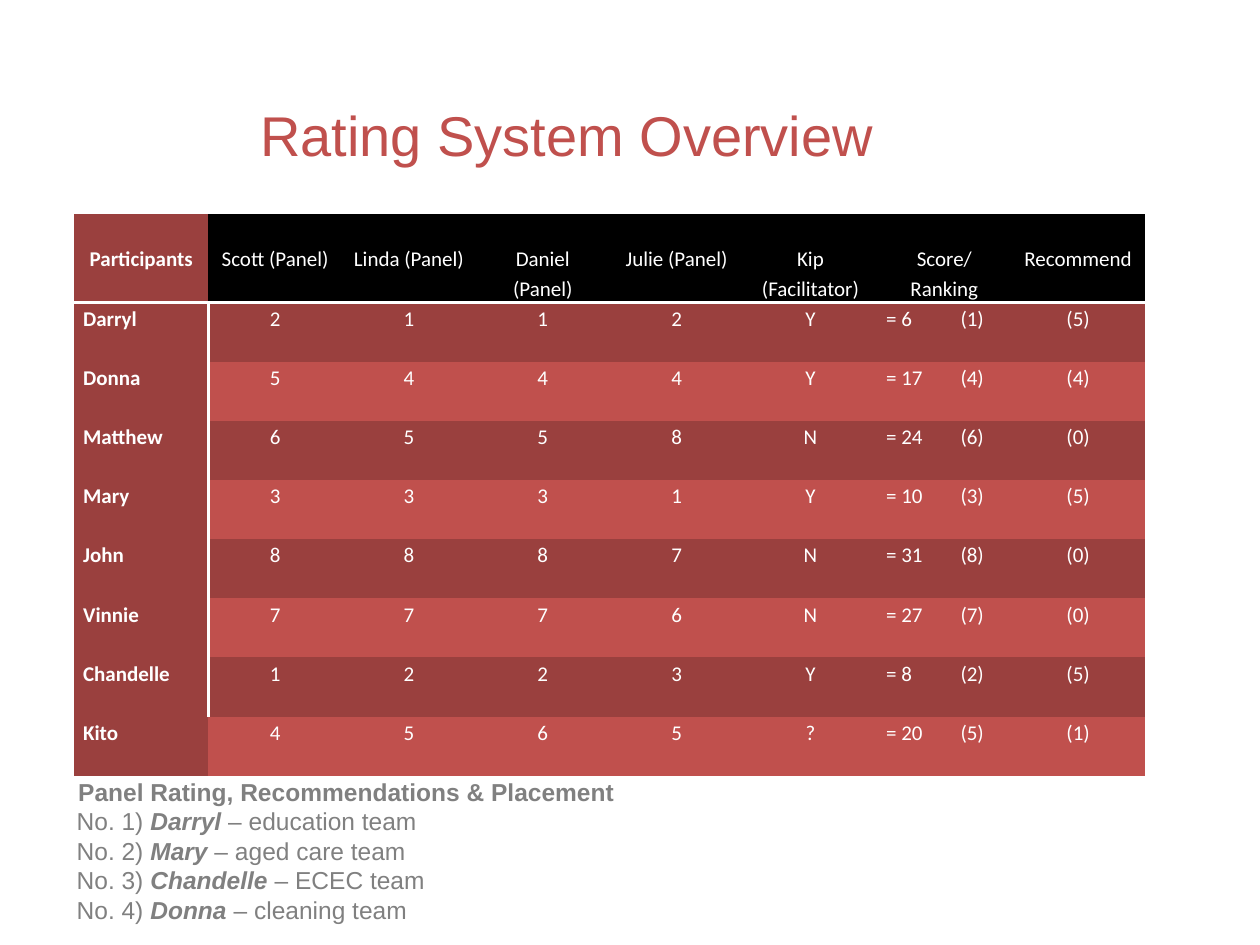
from lxml.etree import SubElement
from pptx import Presentation
from pptx.dml.color import RGBColor
from pptx.enum.text import MSO_ANCHOR as Anchor, MSO_AUTO_SIZE as AutoSize, PP_ALIGN as Align
from pptx.oxml import parse_xml
from pptx.oxml.ns import nsdecls, qn
from pptx.util import Inches, Pt

# Content
TITLE = "Rating System Overview"
HEADINGS = ["Participants", "Scott (Panel)", "Linda (Panel)", "Daniel (Panel)",
            "Julie (Panel)", "Kip (Facilitator)", "Score/ Ranking", "Recommend"]
RATINGS = [
    ("Darryl", "2", "1", "1", "2", "Y", "= 6\t(1)", "(5)"),
    ("Donna", "5", "4", "4", "4", "Y", "= 17\t(4)", "(4)"),
    ("Matthew", "6", "5", "5", "8", "N", "= 24\t(6)", "(0)"),
    ("Mary", "3", "3", "3", "1", "Y", "= 10\t(3)", "(5)"),
    ("John", "8", "8", "8", "7", "N", "= 31\t(8)", "(0)"),
    ("Vinnie", "7", "7", "7", "6", "N", "= 27\t(7)", "(0)"),
    ("Chandelle", "1", "2", "2", "3", "Y", "= 8\t(2)", "(5)"),
    ("Kito", "4", "5", "6", "5", "?", "= 20\t(5)", "(1)"),
]
PLACEMENT_HEADING = "Panel Rating, Recommendations & Placement"
PLACEMENTS = [("Darryl", "education"), ("Mary", "aged care"),
              ("Chandelle", "ECEC"), ("Donna", "cleaning")]

# Look
RED, DARK_RED, BLACK, WHITE, GREY = "C0504D", "9A403E", "000000", "FFFFFF", "808080"
NO_STYLE = "{2D5ABB26-0587-4C30-8999-92F81FD0307C}"
NAME_COL, SCORE_COL = 0, 6
COL_WIDTH, HEADER_HEIGHT, ROW_HEIGHT = 8.5 / len(HEADINGS), 0.7, 0.47


def color(hex_code):
    return RGBColor.from_string(hex_code)


def add_text(paragraph, text, *, size, font="Arial", hue=GREY, bold=False,
             italic=False, align=None, spacing=None):
    run = paragraph.add_run()
    run.text = text
    run.font.name, run.font.size = font, Pt(size)
    run.font.bold, run.font.italic = bold, italic
    run.font.color.rgb = color(hue)
    if align is not None:
        paragraph.alignment = align
    if spacing is not None:
        paragraph.line_spacing = spacing


def add_border(cell, side):
    cell._tc.get_or_add_tcPr().insert(0, parse_xml(
        f'<a:{side} {nsdecls("a")} w="{Pt(2)}"><a:solidFill>'
        f'<a:srgbClr val="{WHITE}"/></a:solidFill></a:{side}>'))


def add_tab_stop(paragraph, position):
    stops = SubElement(paragraph._p.get_or_add_pPr(), qn("a:tabLst"))
    SubElement(stops, qn("a:tab"), pos=str(Inches(position)), algn="l")


def fill_cell(cell, text, row, col):
    header, name = row == 0, col == NAME_COL
    cell.margin_left = cell.margin_right = Inches(0.07)
    cell.margin_top = Inches(0.23 if header else 0)
    cell.margin_bottom = 0
    cell.fill.solid()
    if name or (not header and row % 2):
        fill = DARK_RED
    else:
        fill = BLACK if header else RED
    cell.fill.fore_color.rgb = color(fill)

    paragraph = cell.text_frame.paragraphs[0]
    if col == SCORE_COL and not header:
        add_tab_stop(paragraph, 0.59)
    left = not header and col in (NAME_COL, SCORE_COL)
    add_text(paragraph, text, size=12, font="Calibri", hue=WHITE, bold=name,
             align=Align.LEFT if left else Align.CENTER, spacing=1.15)

    # Rules under the header and beside the names
    if header:
        add_border(cell, "lnB")
    elif name and row < len(RATINGS):
        add_border(cell, "lnR")


def main():
    deck = Presentation()
    deck.slide_width, deck.slide_height = Inches(10), Inches(7.5)
    slide = deck.slides.add_slide(deck.slide_layouts[5])

    # Title
    title = slide.shapes.title
    title.left, title.top = Inches(0), Inches(0.44)
    title.width, title.height = Inches(9), Inches(1.25)
    title.text_frame.vertical_anchor = Anchor.MIDDLE
    add_text(title.text_frame.paragraphs[0], TITLE, size=32, hue=RED, align=Align.CENTER)

    # Ratings table
    rows = [HEADINGS, *RATINGS]
    table_height = HEADER_HEIGHT + ROW_HEIGHT * len(RATINGS)
    ratings = slide.shapes.add_table(len(rows), len(HEADINGS), Inches(0.59), Inches(1.7),
                                     Inches(8.5), Inches(table_height)).table
    ratings._tbl.tblPr.find(qn("a:tableStyleId")).text = NO_STYLE
    ratings.horz_banding = False
    for column in ratings.columns:
        column.width = Inches(COL_WIDTH)
    for r, values in enumerate(rows):
        ratings.rows[r].height = Inches(ROW_HEIGHT if r else HEADER_HEIGHT)
        for c, value in enumerate(values):
            fill_cell(ratings.cell(r, c), value, r, c)

    # Placements
    placements = slide.shapes.add_textbox(Inches(0.51), Inches(6.11),
                                          Inches(4.48), Inches(1.28)).text_frame
    placements.word_wrap = False
    placements.auto_size = AutoSize.SHAPE_TO_FIT_TEXT
    placements.vertical_anchor = Anchor.MIDDLE
    add_text(placements.paragraphs[0], PLACEMENT_HEADING, size=14, bold=True,
             align=Align.CENTER)
    for number, (person, team) in enumerate(PLACEMENTS, 1):
        line = placements.add_paragraph()
        add_text(line, f"No. {number}) ", size=14, align=Align.LEFT)
        add_text(line, person, size=14, bold=True, italic=True)
        add_text(line, f" – {team} team", size=14)

    deck.save("out.pptx")


if __name__ == "__main__":
    main()
